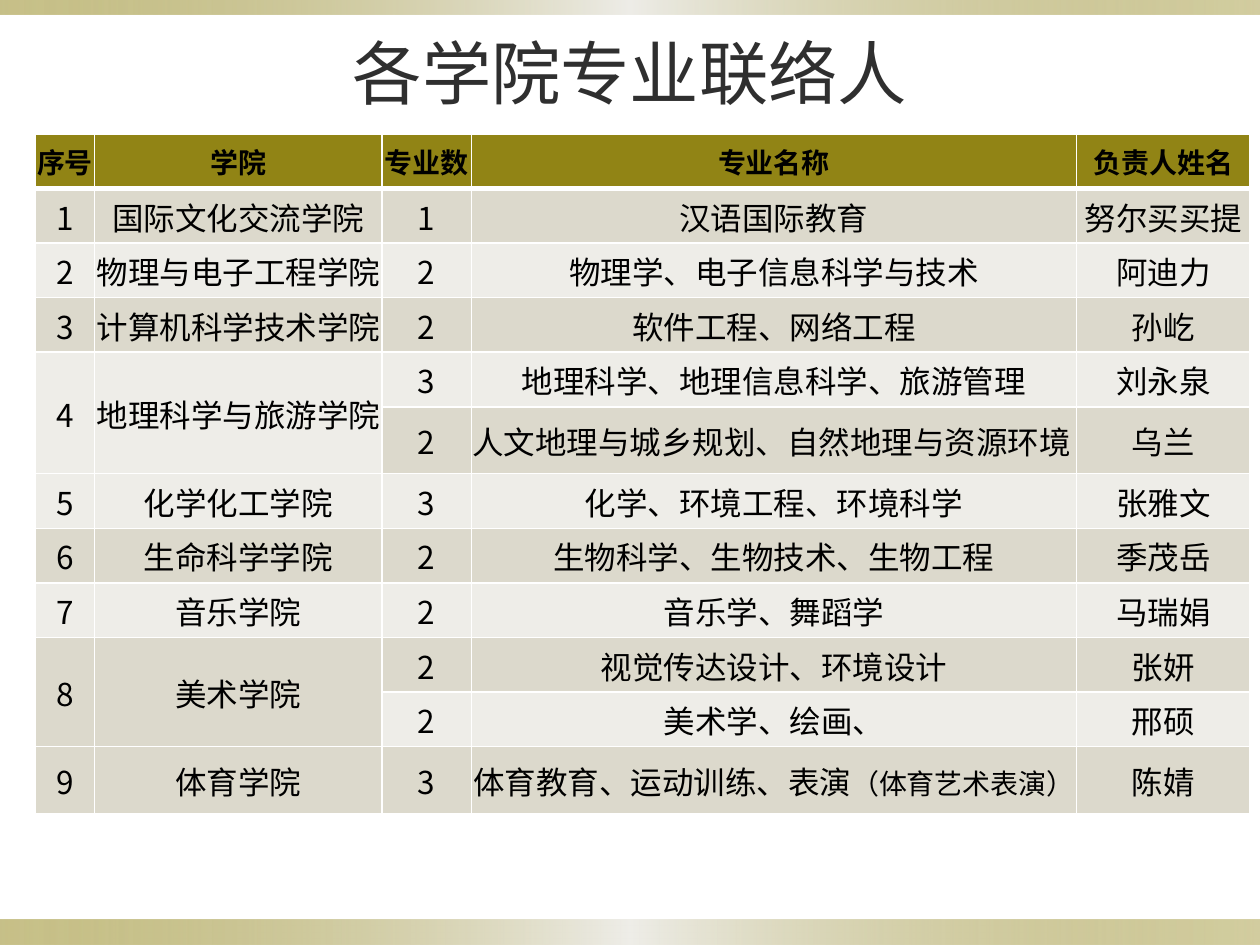
import pptx
import pptx.dml.color
import pptx.enum.shapes
import pptx.enum.text
import pptx.oxml
import pptx.oxml.ns
import pptx.util
from pptx.util import Cm

CENTER = pptx.enum.text.PP_ALIGN.CENTER
LEFT = pptx.enum.text.PP_ALIGN.LEFT
MIDDLE = pptx.enum.text.MSO_ANCHOR.MIDDLE
NS = pptx.oxml.ns.nsdecls("a")

HEADER = ("序号", "学院", "专业数", "专业名称", "负责人姓名")
ROWS = [
    ("1", "国际文化交流学院", "1", "汉语国际教育", "努尔买买提"),
    ("2", "物理与电子工程学院", "2", "物理学、电子信息科学与技术", "阿迪力"),
    ("3", "计算机科学技术学院", "2", "软件工程、网络工程", "孙屹"),
    ("4", "地理科学与旅游学院", "3", "地理科学、地理信息科学、旅游管理", "刘永泉"),
    ("", "", "2", "人文地理与城乡规划、自然地理与资源环境", "乌兰"),
    ("5", "化学化工学院", "3", "化学、环境工程、环境科学", "张雅文"),
    ("6", "生命科学学院", "2", "生物科学、生物技术、生物工程", "季茂岳"),
    ("7", "音乐学院", "2", "音乐学、舞蹈学", "马瑞娟"),
    ("8", "美术学院", "2", "视觉传达设计、环境设计", "张妍"),
    ("", "", "2", "美术学、绘画、", "邢硕"),
    ("9", "体育学院", "3", "体育教育、运动训练、表演（体育艺术表演）", "陈婧"),
]
COLUMN_WIDTHS = (1.2, 5.79, 1.8, 12.2, 3.5)
ROW_HEIGHT, TALL_ROW_HEIGHT, TALL_ROWS = 1.1, 1.35, (5, 11)
LEFT_ALIGNED = (5, 3)


def rgb(value):
    return pptx.dml.color.RGBColor.from_string(value)


def add_text(p, text, size=18, color="000000", bold=False,
             font="Noto Sans CJK SC", align=CENTER):
    p.alignment = align
    r = p.add_run()
    r.text = text
    r.font.size = pptx.util.Pt(size)
    r.font.bold = bold
    r.font.name = font
    r.font.color.rgb = rgb(color)
    r.font._element.append(pptx.oxml.parse_xml(
        f'<a:ea {NS} typeface="Noto Sans CJK SC"/>'))


class SlideBuilder:
    """Holds the colours and the current slide, and draws each kind of element."""

    olive, pale, band, ink, white = "918415", "EEEDE8", "DCD9CC", "2F2F2F", "FFFFFF"

    def __init__(self, slide):
        self.s = slide

    def bar(self, top, height):
        sp = self.s.shapes.add_shape(
            pptx.enum.shapes.MSO_SHAPE.RECTANGLE, 0, Cm(top), Cm(25.4), Cm(height))
        sp.shadow.inherit = False
        sp.line.fill.background()
        sp.fill.gradient()
        sp.fill.gradient_angle = 0
        stops = sp._element.spPr.find(".//" + pptx.oxml.ns.qn("a:gsLst"))
        for stop in list(stops):
            stops.remove(stop)
        for place, color, alpha in ((0, self.olive, 50), (50, self.pale, 100),
                                    (100, self.olive, 40)):
            stops.append(pptx.oxml.parse_xml(
                f'<a:gs {NS} pos="{place * 1000}"><a:srgbClr val="{color}">'
                f'<a:alpha val="{alpha * 1000}"/></a:srgbClr></a:gs>'))

    def title(self, text):
        sp = self.s.shapes.add_textbox(Cm(1.27), Cm(0.76), Cm(22.86), Cm(1.37))
        tf = sp.text_frame
        tf.word_wrap = True
        tf.vertical_anchor = MIDDLE
        add_text(tf.paragraphs[0], text, size=39.6, color=self.ink, font="Roboto")

    def borders(self, cell, row):
        tc_pr = cell._tc.get_or_add_tcPr()
        for side in "LRTB":
            width = 3 if (row, side) in ((0, "B"), (1, "T")) else 1
            tc_pr.append(pptx.oxml.parse_xml(
                f'<a:ln{side} {NS} w="{width * 12700}"><a:solidFill>'
                f'<a:srgbClr val="{self.white}"/></a:solidFill></a:ln{side}>'))

    def cell(self, cell, row, column, text):
        self.borders(cell, row)
        cell.fill.solid()
        fill = self.olive if row == 0 else self.band if row % 2 else self.pale
        cell.fill.fore_color.rgb = rgb(fill)
        cell.vertical_anchor = MIDDLE
        cell.margin_left = cell.margin_right = cell.margin_top = Cm(0.02)
        cell.margin_bottom = 0
        if not text:
            return
        p = cell.text_frame.paragraphs[0]
        align = LEFT if (row, column) == LEFT_ALIGNED else CENTER
        main, bracket, note = text.partition("（")
        add_text(p, main, size=18 if row else 16, bold=row == 0, align=align)
        if note:
            add_text(p, bracket + note, size=16, align=align)

    def table(self, left, top, data):
        heights = [TALL_ROW_HEIGHT if i in TALL_ROWS else ROW_HEIGHT
                   for i in range(len(data))]
        table = self.s.shapes.add_table(
            len(data), len(COLUMN_WIDTHS), Cm(left), Cm(top),
            Cm(sum(COLUMN_WIDTHS)), Cm(sum(heights))).table
        table.horz_banding = False
        for column, width in zip(table.columns, COLUMN_WIDTHS):
            column.width = Cm(width)
        for i, (values, height) in enumerate(zip(data, heights)):
            table.rows[i].height = Cm(height)
            for j, text in enumerate(values):
                self.cell(table.cell(i, j), i, j, text)
                if not text:
                    table.cell(i - 1, j).merge(table.cell(i, j))


def main():
    prs = pptx.Presentation()
    prs.slide_width, prs.slide_height = Cm(25.4), Cm(19.05)
    builder = SlideBuilder(prs.slides.add_slide(prs.slide_layouts[6]))
    builder.bar(18.54, 0.51)
    builder.bar(0, 0.3)
    builder.title("各学院专业联络人")
    builder.table(0.71, 2.7, [HEADER] + ROWS)
    prs.save("out.pptx")


if __name__ == "__main__":
    main()
